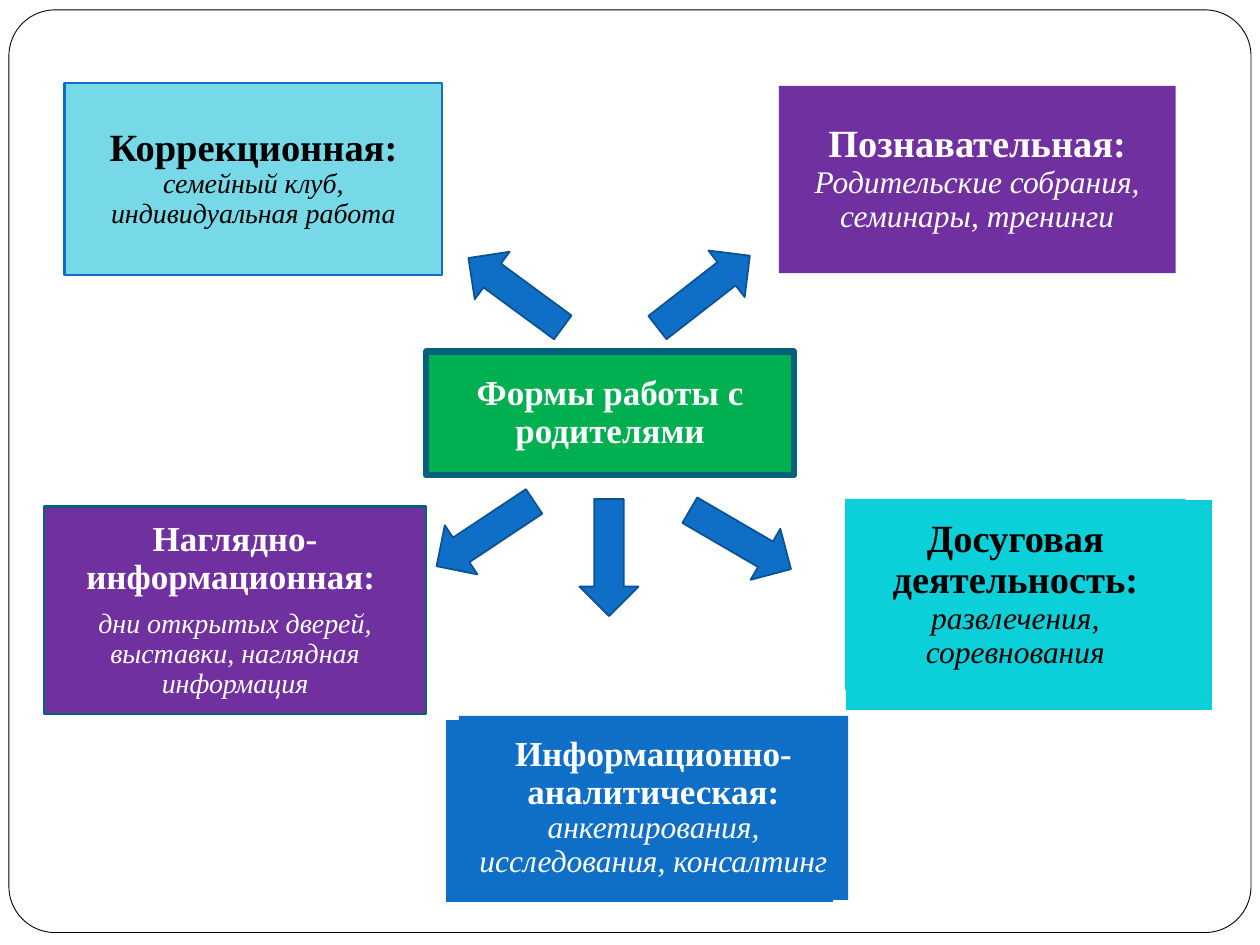
from pptx import Presentation
from pptx.dml.color import RGBColor
from pptx.enum.shapes import MSO_SHAPE
from pptx.enum.text import MSO_ANCHOR, PP_ALIGN
from pptx.util import Cm, Pt

HUES = {
    "white": "FFFFFF", "black": "000000", "green": "00B050", "teal": "04617B",
    "sky": "77D9E8", "blue": "0F6FC6", "navy": "0B5292", "plum": "7030A0",
    "aqua": "0BD0D9",
}
FONT = "Times New Roman"


def hue(name):
    """Return the named colour."""
    return RGBColor.from_string(HUES[name])


def block(slide, kind, box, fill, line=None, width=1):
    """Place a filled shape with an optional outline."""
    shape = slide.shapes.add_shape(kind, *(Cm(n) for n in box))
    shape.shadow.inherit = False
    shape.fill.solid()
    shape.fill.fore_color.rgb = hue(fill)
    if line:
        shape.line.color.rgb = hue(line)
        shape.line.width = Pt(width)
    else:
        shape.line.fill.background()
    return shape


def write(shape, paras, ink, inset):
    """Fill a shape with centred paragraphs of (text, size, is_title) runs."""
    frame = shape.text_frame
    frame.word_wrap = True
    frame.vertical_anchor = MSO_ANCHOR.MIDDLE
    frame.margin_left = frame.margin_right = Cm(inset)
    frame.margin_top = frame.margin_bottom = Cm(inset)
    for i, runs in enumerate(paras):
        para = frame.paragraphs[0] if i == 0 else frame.add_paragraph()
        para.alignment = PP_ALIGN.CENTER
        para.line_spacing = 0.9
        para.space_after = Pt(7)
        para.font.name = FONT
        para.font.color.rgb = hue(ink)
        for text, size, title in runs:
            run = para.add_run()
            run.text = text
            run.font.size = Pt(size)
            run.font.bold = title
            run.font.italic = not title


def core(slide, box):
    """Draw the central topic."""
    shape = block(slide, MSO_SHAPE.RECTANGLE, box, "green", "teal", 3.75)
    write(shape, [[("Формы работы с родителями", 20, True)]], "white", 0.2)


def card(slide, box, fill, ink, head, body, line=None, back=None, split=False):
    """Draw one form of work; back is the offset and size of a rear panel."""
    left, top, wide, high = box
    if back:
        dx, dy, *size = back
        rear = (left + dx, top + dy, *size)
        block(slide, MSO_SHAPE.RECTANGLE, rear, fill, "white")
    shape = block(slide, MSO_SHAPE.RECTANGLE, box, fill, line, 1.25)
    runs = [(*head, True), (*body, False)]
    write(shape, [[run] for run in runs] if split else [runs], ink, 0.23)


def arrow(slide, left, top, turn):
    """Draw a block arrow turned clockwise from upright."""
    box = (left, top, 1.19, 2.36)
    shape = block(slide, MSO_SHAPE.UP_ARROW, box, "blue", "navy")
    shape.rotation = turn


def main():
    """Build the slide and save it."""
    deck = Presentation()
    deck.slide_width, deck.slide_height = Cm(25.4), Cm(19.05)
    slide = deck.slides.add_slide(deck.slide_layouts[6])
    edge = block(slide, MSO_SHAPE.ROUNDED_RECTANGLE,
                 (0.18, 0.2, 25.04, 18.6), "white", "black", 0.5)
    edge.adjustments[0] = 0.05
    core(slide, (8.59, 7.09, 7.42, 2.49))
    card(slide, (1.3, 1.68, 7.62, 3.86), "sky", "black",
         ("Коррекционная: ", 22),
         ("семейный клуб, индивидуальная работа", 16), line="blue")
    card(slide, (0.89, 10.21, 7.7, 4.19), "plum", "white",
         ("Наглядно-информационная: ", 20),
         ("дни открытых дверей, выставки, наглядная информация", 16),
         line="teal", split=True)
    card(slide, (15.7, 1.73, 8, 3.78), "plum", "white",
         ("Познавательная: ", 22),
         ("Родительские собрания, семинары, тренинги", 18))
    card(slide, (9.25, 14.43, 7.85, 3.71), "blue", "white",
         ("Информационно-аналитическая: ", 20),
         ("анкетирования, исследования, консалтинг", 18),
         back=(-0.28, 0.07, 7.85, 3.71))
    card(slide, (17.04, 10.06, 6.86, 3.86), "aqua", "black",
         ("Досуговая деятельность: ", 22),
         ("развлечения, соревнования", 18), back=(0, 0, 7.42, 4.27))
    for spot in [(9.8, 4.72, 306.3), (13.59, 4.7, 52.1), (9.19, 9.58, 236.4),
                 (14.33, 9.7, 120.2), (11.68, 10.06, 180)]:
        arrow(slide, *spot)
    deck.save("out.pptx")


if __name__ == "__main__":
    main()
